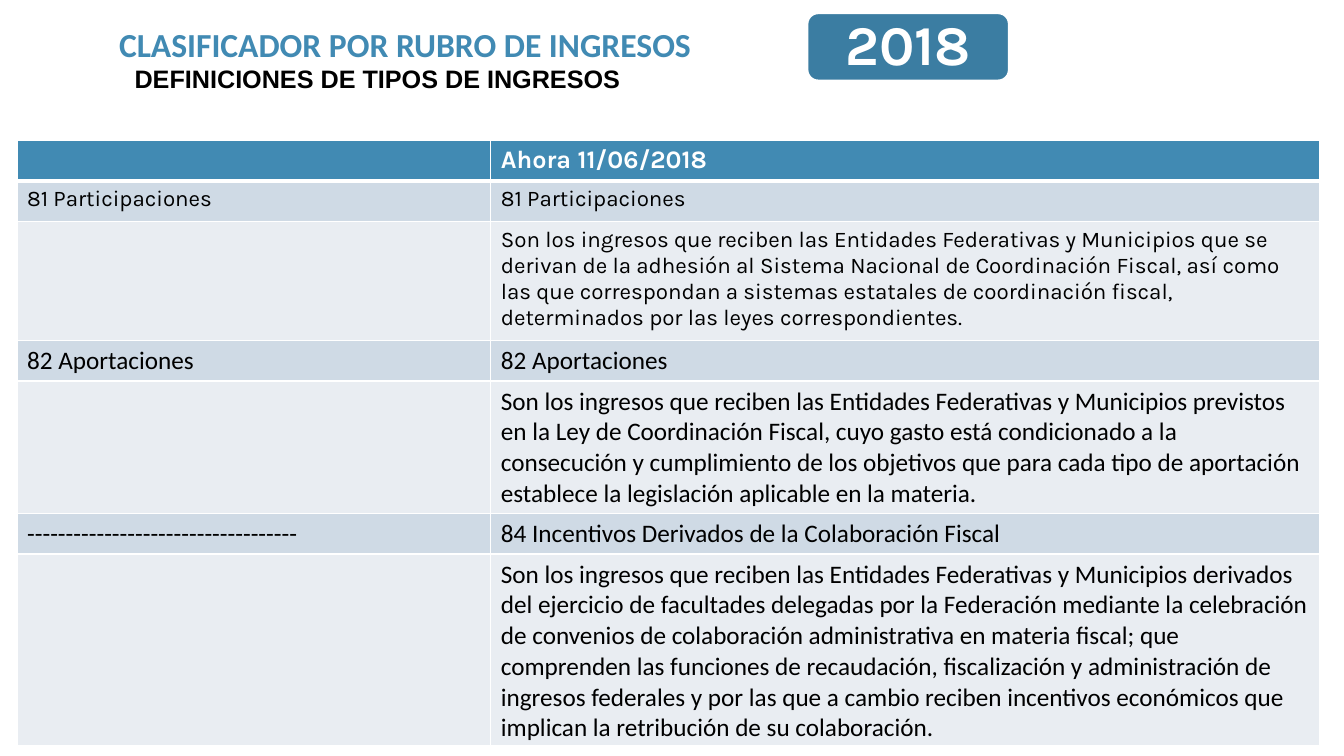
import pptx
import pptx.dml.color
import pptx.enum.shapes
import pptx.enum.text
import pptx.oxml
import pptx.oxml.ns
import pptx.util
from dataclasses import dataclass

Pt = pptx.util.Pt
Align = pptx.enum.text.PP_ALIGN
Anchor = pptx.enum.text.MSO_ANCHOR


@dataclass(frozen=True)
class Theme:
    blue: str = "418AB3"
    badge: str = "3B7DA2"
    band: str = "CFDAE5"
    pale: str = "E9EDF2"
    white: str = "FFFFFF"
    black: str = "000000"
    sans: str = "Calibri"
    accent: str = "Karla"
    plain: str = "Arial"
    year: int = 40
    title: int = 24
    body: int = 18
    small: int = 16


THEME = Theme()

PARTICIPACIONES = (
    "Son los ingresos que reciben las Entidades Federativas y Municipios que se derivan de la "
    "adhesión al Sistema Nacional de Coordinación Fiscal, así como las que correspondan a sistemas "
    "estatales de coordinación fiscal, determinados por las leyes correspondientes."
)
APORTACIONES = (
    "Son los ingresos que reciben las Entidades Federativas y Municipios previstos en la Ley de "
    "Coordinación Fiscal, cuyo gasto está condicionado a la consecución y cumplimiento de los "
    "objetivos que para cada tipo de aportación establece la legislación aplicable en la materia."
)
INCENTIVOS = (
    "Son los ingresos que reciben las Entidades Federativas y Municipios derivados del ejercicio de "
    "facultades delegadas por la Federación mediante la celebración de convenios de colaboración "
    "administrativa en materia fiscal; que comprenden las funciones de recaudación, fiscalización y "
    "administración de ingresos federales y por las que a cambio reciben incentivos económicos que "
    "implican la retribución de su colaboración."
)
ROWS = [
    (29.2, "", "Ahora 11/06/2018", THEME.accent, THEME.body),
    (29.2, "81 Participaciones", "81 Participaciones", THEME.accent, THEME.small),
    (84.6, "", PARTICIPACIONES, THEME.accent, THEME.small),
    (29.2, "82 Aportaciones", "82 Aportaciones", THEME.sans, THEME.body),
    (94.4, "", APORTACIONES, THEME.sans, THEME.body),
    (29.2, "-" * 35, "84 Incentivos Derivados de la Colaboración Fiscal", THEME.sans, THEME.body),
    (136, "", INCENTIVOS, THEME.sans, THEME.body),
]


def rgb(color):
    return pptx.dml.color.RGBColor.from_string(color)


def write(frame, text, font, size, color, bold=False):
    frame.text = text
    paragraph = frame.paragraphs[0]
    for run in paragraph.runs:
        run.font.name = font
        run.font.size = Pt(size)
        run.font.bold = bold
        run.font.color.rgb = rgb(color)
    return paragraph


def add_heading(slide, box, text, font, size, color):
    frame = slide.shapes.add_textbox(*map(Pt, box)).text_frame
    frame.word_wrap = True
    paragraph = write(frame, text, font, size, color, True)
    paragraph.alignment = Align.CENTER
    paragraph.line_spacing = 0.9


def add_year_badge(slide, box, text):
    badge = slide.shapes.add_shape(
        pptx.enum.shapes.MSO_SHAPE.ROUNDED_RECTANGLE, *map(Pt, box))
    badge.adjustments[0] = 0.16
    badge.shadow.inherit = False
    badge.fill.solid()
    badge.fill.fore_color.rgb = rgb(THEME.badge)
    badge.line.color.rgb = rgb(THEME.white)
    badge.line.width = Pt(1.5)
    frame = badge.text_frame
    frame.vertical_anchor = Anchor.MIDDLE
    frame.margin_top = frame.margin_bottom = Pt(0)
    paragraph = write(frame, text, THEME.accent, THEME.year, THEME.white, True)
    paragraph.alignment = Align.CENTER
    paragraph.line_spacing = 0.9


def set_borders(cell, top, bottom):
    properties = cell._tc.get_or_add_tcPr()
    widths = {"lnL": 1, "lnR": 1, "lnT": top, "lnB": bottom}
    for place, (edge, width) in enumerate(widths.items()):
        properties.insert(place, pptx.oxml.parse_xml(
            f'<a:{edge} {pptx.oxml.ns.nsdecls("a")} w="{Pt(width)}"><a:solidFill>'
            f'<a:srgbClr val="{THEME.white}"/></a:solidFill></a:{edge}>'))


def add_definitions(slide, left, top, widths):
    heights = [row[0] for row in ROWS]
    table = slide.shapes.add_table(
        len(ROWS), len(widths), Pt(left), Pt(top), Pt(sum(widths)), Pt(sum(heights))).table
    for column, width in zip(table.columns, widths):
        column.width = Pt(width)
    for index, (height, before, now, font, size) in enumerate(ROWS):
        table.rows[index].height = Pt(height)
        header = index == 0
        fill = THEME.blue if header else THEME.band if index % 2 else THEME.pale
        color = THEME.white if header else THEME.black
        for cell, text in zip(table.rows[index].cells, (before, now)):
            cell.fill.solid()
            cell.fill.fore_color.rgb = rgb(fill)
            set_borders(cell, 3 if index == 1 else 1, 3 if header else 1)
            write(cell.text_frame, text, font, size, color, header)


def main():
    deck = pptx.Presentation()
    deck.slide_width, deck.slide_height = Pt(960), Pt(540)
    slide = deck.slides.add_slide(deck.slide_layouts[6])
    add_heading(slide, (12.2, 16.6, 554.4, 33.1), "CLASIFICADOR POR RUBRO DE INGRESOS",
                THEME.sans, THEME.title, THEME.blue)
    add_year_badge(slide, (576.7, 9.4, 144, 48.2), "2018")
    add_definitions(slide, 12.2, 100, (338.4, 591.8))
    add_heading(slide, (42.5, 43.9, 454.3, 26.6), "DEFINICIONES DE TIPOS DE INGRESOS",
                THEME.plain, THEME.body, THEME.black)
    deck.save("out.pptx")


if __name__ == "__main__":
    main()
